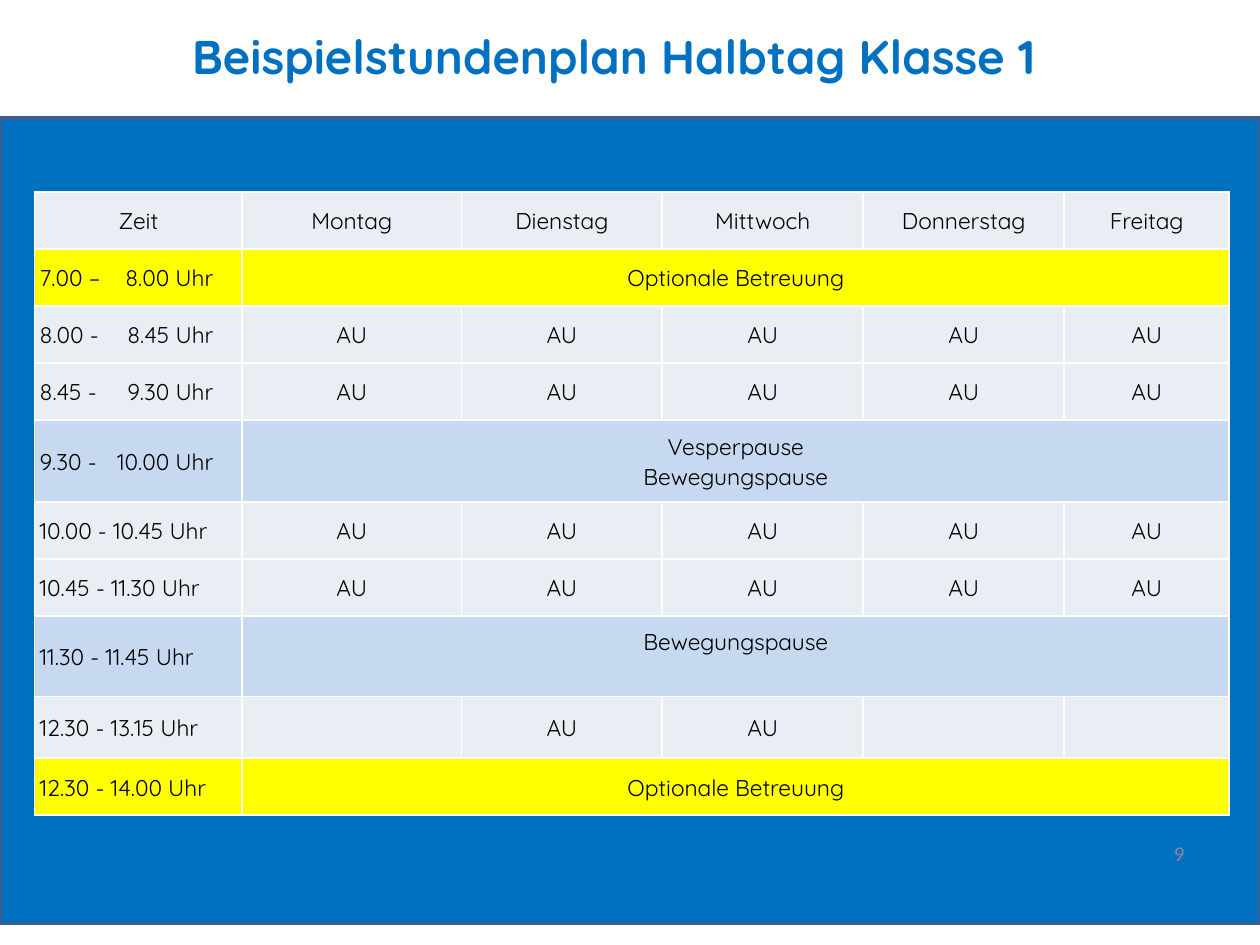
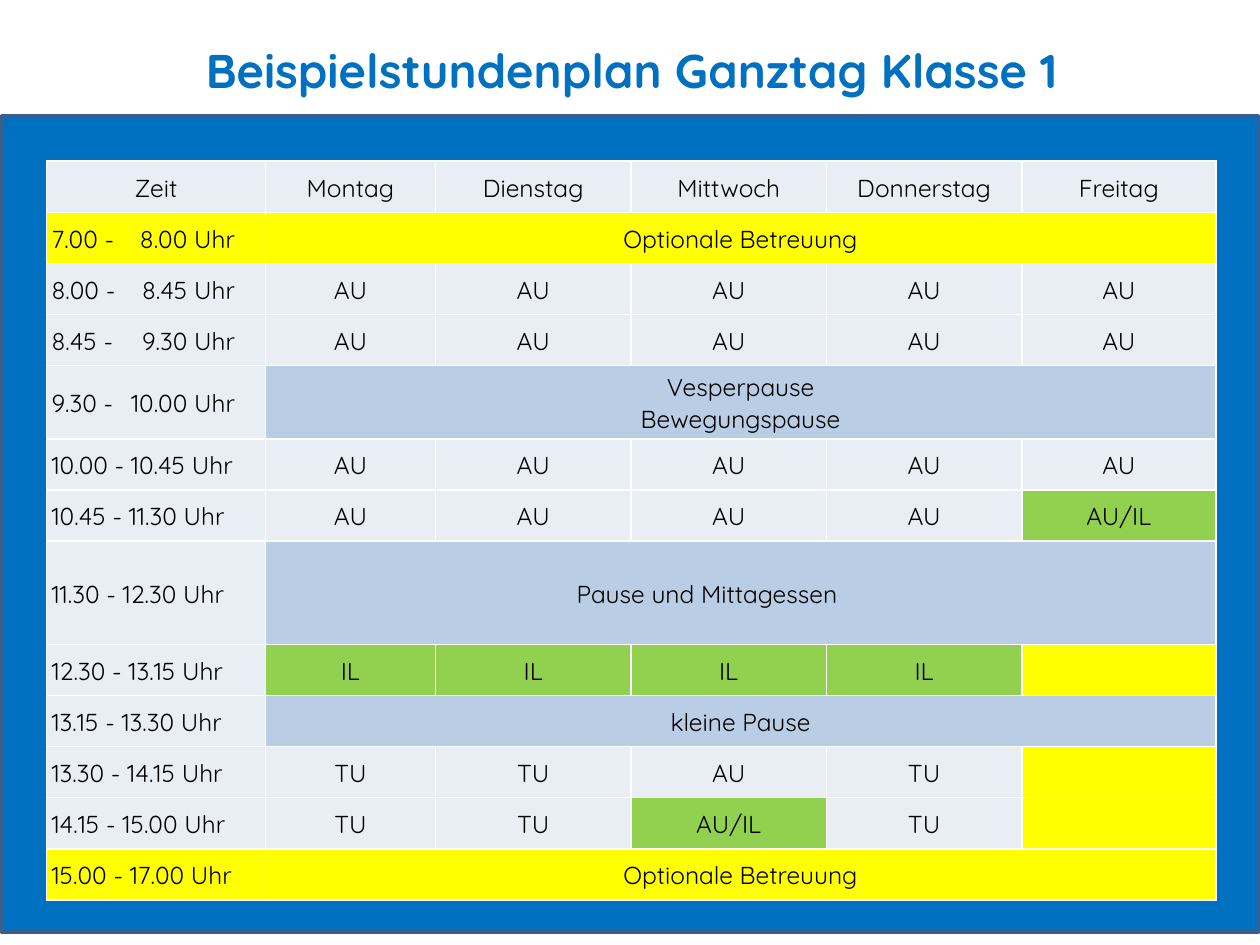
"""Build two sample timetables for class 1: half-day and full-day."""
from dataclasses import dataclass

from lxml.etree import SubElement
from pptx import Presentation
from pptx.dml.color import RGBColor
from pptx.enum.shapes import MSO_SHAPE
from pptx.enum.text import MSO_ANCHOR, PP_ALIGN
from pptx.oxml.ns import qn
from pptx.util import Cm, Pt

BLUE = "0070C0"
BLUE_EDGE = "3A5F8C"
WHITE = "FFFFFF"
BLACK = "000000"
NUMBER_GRAY = "8C8C8C"
LESSON = "E9EDF4"
CARE = "FFFF00"
LEARNING_TIME = "92D050"
HALF_DAY_BREAK = "C6D9F1"
FULL_DAY_BREAK = "B9CDE5"

FONT = "Quicksand"
DAYS = ["Montag", "Dienstag", "Mittwoch", "Donnerstag", "Freitag"]
ALL_AU = ["AU"] * 5
OPTIONAL_CARE = "Optionale Betreuung"
MEAL_BREAK = "Vesperpause\nBewegungspause"
MOVEMENT_BREAK = "Bewegungspause"
LUNCH = "Pause und Mittagessen"


@dataclass
class Timetable:
    """Content and layout of one timetable; tall_rows maps row index to height."""
    rows: list
    left: float
    top: float
    column_widths: list
    row_height: float
    tall_rows: dict
    font_size: int
    time_tab: float
    break_fill: str
    break_time_fill: str
    free_fill: str


HALF_DAY = Timetable(
    rows=[
        ("Zeit", DAYS),
        ("7.00 –\t8.00 Uhr", OPTIONAL_CARE),
        ("8.00 -\t8.45 Uhr", ALL_AU),
        ("8.45 -\t9.30 Uhr", ALL_AU),
        ("9.30 -\t10.00 Uhr", MEAL_BREAK),
        ("10.00 - 10.45 Uhr", ALL_AU),
        ("10.45 - 11.30 Uhr", ALL_AU),
        ("11.30 - 11.45 Uhr", MOVEMENT_BREAK),
        ("12.30 - 13.15 Uhr", ["", "AU", "AU", "", ""]),
        ("12.30 - 14.00 Uhr", OPTIONAL_CARE),
    ],
    left=0.7, top=3.87,
    column_widths=[4.18, 4.42, 4.05, 4.05, 4.05, 3.33],
    row_height=1.15, tall_rows={4: 1.65, 7: 1.63, 8: 1.24},
    font_size=13, time_tab=3.5,
    break_fill=HALF_DAY_BREAK, break_time_fill=HALF_DAY_BREAK, free_fill=LESSON,
)

FULL_DAY = Timetable(
    rows=[
        ("Zeit", DAYS),
        ("7.00 -\t8.00 Uhr", OPTIONAL_CARE),
        ("8.00 -\t8.45 Uhr", ALL_AU),
        ("8.45 -\t9.30 Uhr", ALL_AU),
        ("9.30 -\t10.00 Uhr", MEAL_BREAK),
        ("10.00 - 10.45 Uhr", ALL_AU),
        ("10.45 - 11.30 Uhr", ["AU", "AU", "AU", "AU", "AU/IL"]),
        ("11.30 - 12.30 Uhr", LUNCH),
        ("12.30 - 13.15 Uhr", ["IL", "IL", "IL", "IL", ""]),
        ("13.15 - 13.30 Uhr", "kleine Pause"),
        ("13.30 - 14.15 Uhr", ["TU", "TU", "AU", "TU", ""]),
        ("14.15 - 15.00 Uhr", ["TU", "TU", "AU/IL", "TU", ""]),
        ("15.00 - 17.00 Uhr", OPTIONAL_CARE),
    ],
    left=0.94, top=3.25,
    column_widths=[4.41, 3.43, 3.94, 3.94, 3.94, 3.91],
    row_height=1.03, tall_rows={4: 1.48, 7: 2.08},
    font_size=14, time_tab=3.7,
    break_fill=FULL_DAY_BREAK, break_time_fill=LESSON, free_fill=CARE,
)


def color(hex_value):
    """Return the colour for a hex string."""
    return RGBColor.from_string(hex_value)


def set_font(paragraph, name, size, hex_value, bold=False):
    """Format all text of a paragraph."""
    font = paragraph.font
    font.name, font.size, font.bold = name, Pt(size), bold
    font.color.rgb = color(hex_value)


def add_title(slide, text, left, top, width, height, margin_top=0.13):
    """Place and fill the title placeholder."""
    title = slide.shapes.title
    title.left, title.top = Cm(left), Cm(top)
    title.width, title.height = Cm(width), Cm(height)
    frame = title.text_frame
    frame.text = text
    frame.margin_top = Cm(margin_top)
    frame.vertical_anchor = MSO_ANCHOR.MIDDLE
    paragraph = frame.paragraphs[0]
    paragraph.alignment = PP_ALIGN.CENTER
    set_font(paragraph, FONT, 27, BLUE, bold=True)


def add_panel(slide, left, top, width, height):
    """Add the blue panel behind the timetable."""
    panel = slide.shapes.add_shape(
        MSO_SHAPE.RECTANGLE, Cm(left), Cm(top), Cm(width), Cm(height))
    panel.shadow.inherit = False
    panel.fill.solid()
    panel.fill.fore_color.rgb = color(BLUE)
    panel.line.color.rgb = color(BLUE_EDGE)
    panel.line.width = Pt(2)


def add_slide_number(slide, number):
    """Add the page number at the lower right."""
    box = slide.shapes.add_textbox(Cm(18.2), Cm(16.69), Cm(5.93), Cm(1.02))
    frame = box.text_frame
    frame.word_wrap = True
    frame.vertical_anchor = MSO_ANCHOR.MIDDLE
    frame.text = str(number)
    paragraph = frame.paragraphs[0]
    paragraph.alignment = PP_ALIGN.RIGHT
    set_font(paragraph, "Calibri", 12, NUMBER_GRAY)


def add_cell_borders(cell):
    """Draw thin white lines on all four sides of a cell."""
    properties = cell._tc.get_or_add_tcPr()
    for side in ("lnL", "lnR", "lnT", "lnB"):
        line = SubElement(properties, qn(f"a:{side}"), w=str(Pt(1)))
        fill = SubElement(line, qn("a:solidFill"))
        SubElement(fill, qn("a:srgbClr"), val=WHITE)


def add_right_tab(paragraph, position):
    """Add a right-aligned tab stop to a paragraph."""
    tabs = SubElement(paragraph._p.get_or_add_pPr(), qn("a:tabLst"))
    SubElement(tabs, qn("a:tab"), pos=str(Cm(position)), algn="r")


def format_cell(cell, text, fill, timetable, alignment):
    """Fill one cell with text, colour and borders."""
    add_cell_borders(cell)
    cell.fill.solid()
    cell.fill.fore_color.rgb = color(fill)
    cell.vertical_anchor = MSO_ANCHOR.MIDDLE
    cell.margin_left = cell.margin_right = Cm(0.1)
    cell.margin_top = cell.margin_bottom = Cm(0)
    cell.text_frame.text = text
    for paragraph in cell.text_frame.paragraphs:
        paragraph.alignment = alignment
        paragraph.line_spacing = 1.07
        if "\t" in text:
            add_right_tab(paragraph, timetable.time_tab)
        set_font(paragraph, FONT, timetable.font_size, BLACK)


def activity_fill(activity, timetable):
    """Choose the fill for a single lesson."""
    if not activity:
        return timetable.free_fill
    return LEARNING_TIME if "IL" in activity else LESSON


def fill_row(cells, time, activities, timetable):
    """Fill a row of lessons, or a row with one activity for the whole week."""
    time_fill = LESSON
    if isinstance(activities, str):
        is_care = activities == OPTIONAL_CARE
        time_fill = CARE if is_care else timetable.break_time_fill
        fills = [CARE if is_care else timetable.break_fill] * len(DAYS)
        cells[1].merge(cells[-1])
        texts = [activities] + [""] * (len(DAYS) - 1)
    else:
        texts = activities
        fills = [activity_fill(activity, timetable) for activity in activities]
    time_alignment = PP_ALIGN.CENTER if time == "Zeit" else PP_ALIGN.LEFT
    format_cell(cells[0], time, time_fill, timetable, time_alignment)
    for cell, text, fill in zip(cells[1:], texts, fills):
        format_cell(cell, text, fill, timetable, PP_ALIGN.CENTER)
    if activities == MOVEMENT_BREAK:
        cells[1].margin_bottom = Cm(0.6)
    elif activities == LUNCH:
        cells[1].margin_right = Cm(1.45)


def add_timetable(slide, timetable):
    """Add a timetable as a table."""
    heights = [timetable.tall_rows.get(index, timetable.row_height)
               for index in range(len(timetable.rows))]
    widths = timetable.column_widths
    table = slide.shapes.add_table(
        len(heights), len(widths), Cm(timetable.left), Cm(timetable.top),
        Cm(sum(widths)), Cm(sum(heights))).table
    table.first_row = table.horz_banding = False
    for column, width in zip(table.columns, widths):
        column.width = Cm(width)
    for row, height, (time, activities) in zip(table.rows, heights, timetable.rows):
        row.height = Cm(height)
        fill_row(list(row.cells), time, activities, timetable)


def main():
    """Build and save the presentation."""
    presentation = Presentation()
    presentation.slide_width, presentation.slide_height = Cm(25.4), Cm(19.05)
    title_only = presentation.slide_layouts[5]

    slide = presentation.slides.add_slide(title_only)
    add_panel(slide, 0, 2.38, 25.4, 16.24)
    add_title(slide, "Beispielstundenplan Halbtag Klasse 1",
              -0.03, -1.63, 24.8, 4.57, margin_top=1.04)
    add_slide_number(slide, 9)
    add_timetable(slide, HALF_DAY)

    slide = presentation.slides.add_slide(title_only)
    add_panel(slide, 0.03, 2.33, 25.34, 16.46)
    add_title(slide, "Beispielstundenplan Ganztag Klasse 1",
              0.03, -0.18, 25.4, 3.18)
    add_timetable(slide, FULL_DAY)

    presentation.save("out.pptx")


if __name__ == "__main__":
    main()
